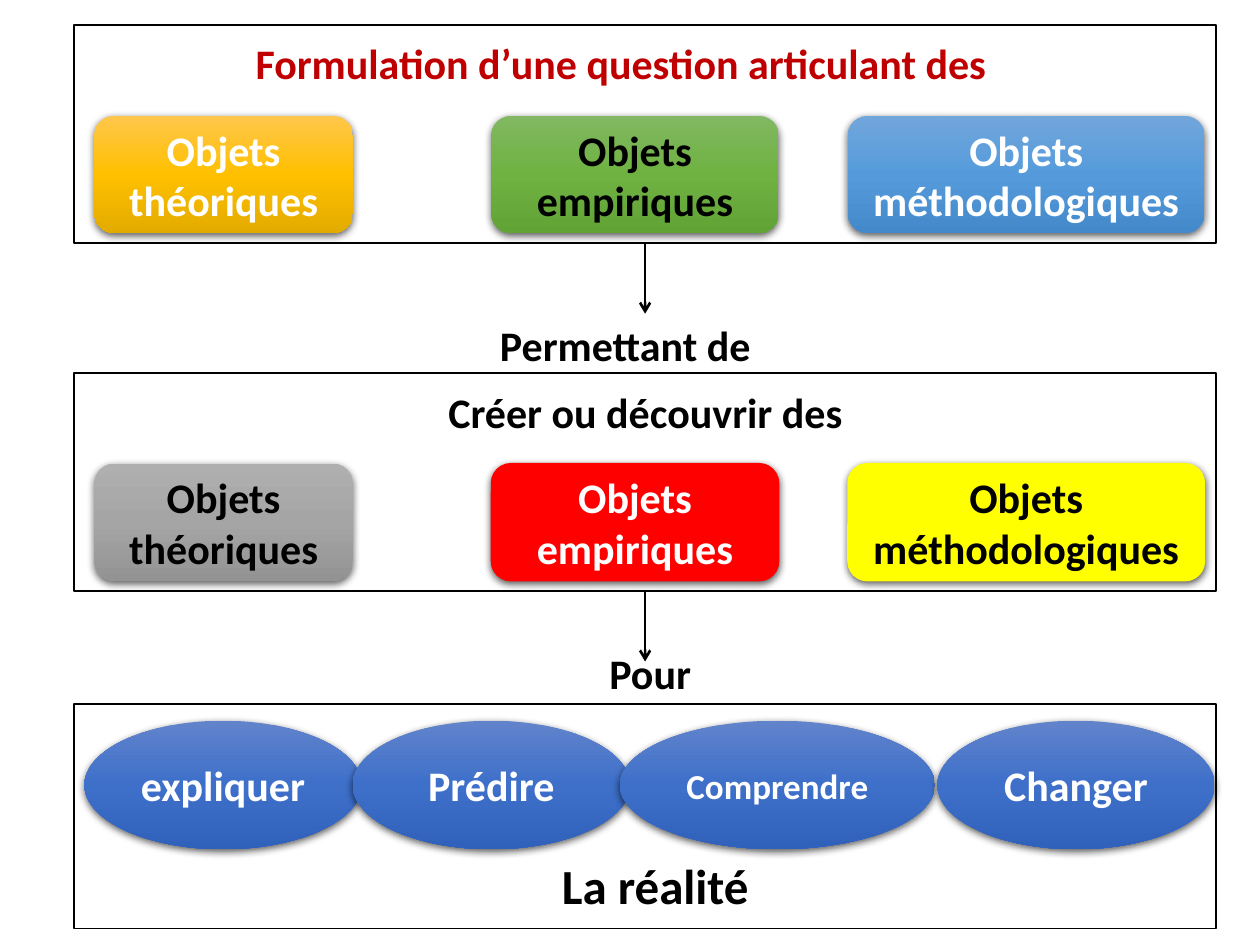
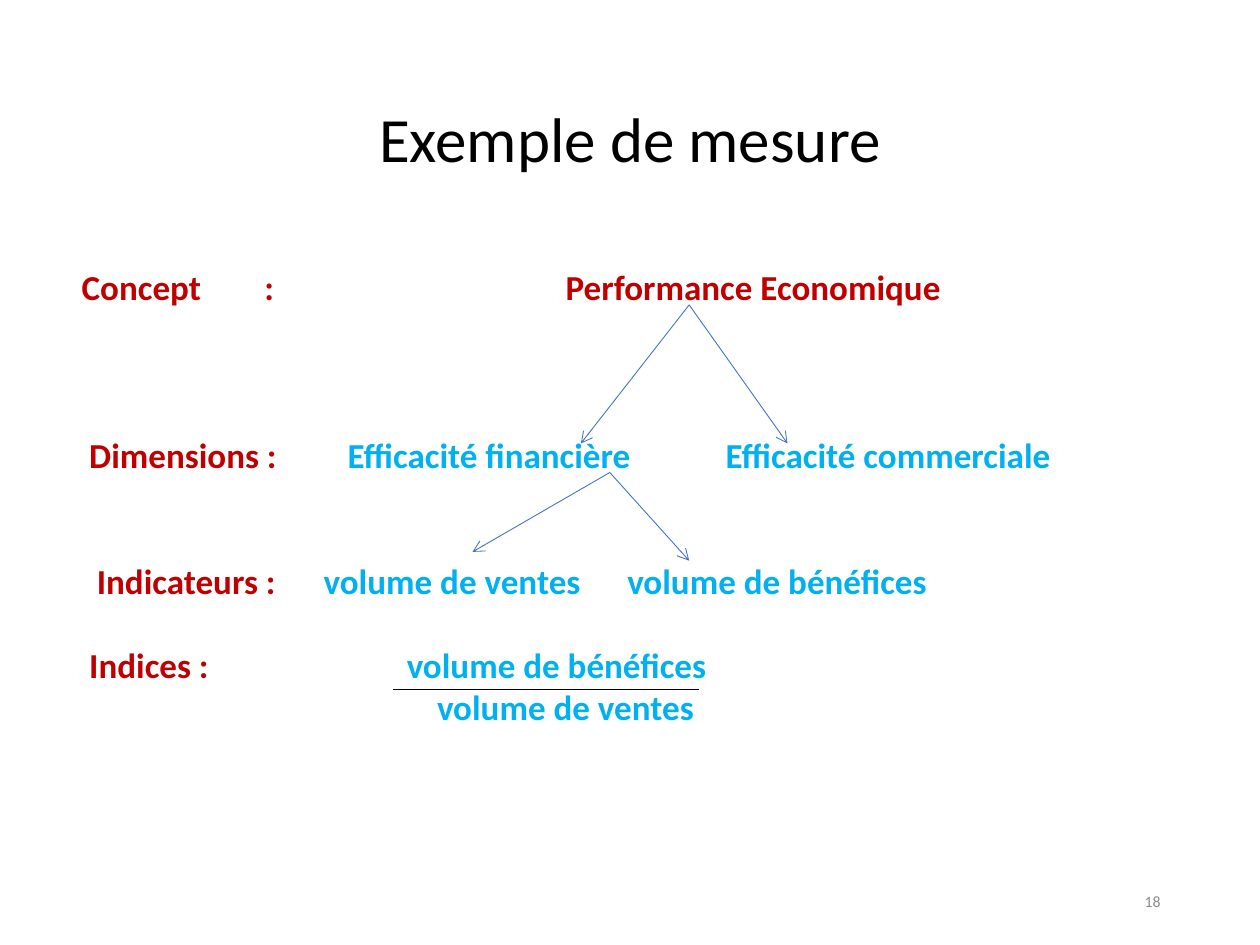
from copy import deepcopy
from dataclasses import dataclass

from lxml.etree import SubElement
from pptx import Presentation
from pptx.dml.color import RGBColor
from pptx.enum.shapes import MSO_CONNECTOR, MSO_SHAPE
from pptx.enum.text import MSO_ANCHOR, PP_ALIGN
from pptx.oxml.ns import qn
from pptx.util import Emu, Pt

RECT, ROUND, OVAL = MSO_SHAPE.RECTANGLE, MSO_SHAPE.ROUNDED_RECTANGLE, MSO_SHAPE.OVAL
STRAIGHT = MSO_CONNECTOR.STRAIGHT
LEFT, MID, RIGHT = PP_ALIGN.LEFT, PP_ALIGN.CENTER, PP_ALIGN.RIGHT
TOP, CENTER = MSO_ANCHOR.TOP, MSO_ANCHOR.MIDDLE
BOTTOM = 2      # connection site
PX = 9144       # EMU in one px, 100 px to the inch


# Theme
@dataclass(frozen=True)
class Theme:
    font: str = "Calibri"
    black: str = "000000"
    white: str = "FFFFFF"
    crimson: str = "C00000"
    cyan: str = "00B0F0"
    blue: str = "4472C4"
    gray: str = "8C8C8C"
    gold: tuple = ("FFC64B", "FFC000", "E3AB00")
    green: tuple = ("81B861", "6FB242", "62A336")
    sky: tuple = ("71A6DB", "559BDB", "448ACA")
    steel: tuple = ("AFAFAF", "A5A5A5", "939393")
    royal: tuple = ("6183CB", "3E70CA", "3062BB")
    red: tuple = ("FF0000",)
    yellow: tuple = ("FFFF00",)
    title: int = 36
    large: int = 28
    head: int = 24
    body: int = 20
    small: int = 9


T = Theme()


@dataclass(frozen=True)
class Box:
    x: int
    y: int
    w: int
    h: int


@dataclass(frozen=True)
class Style:
    size: int = T.head
    color: str = T.black
    bold: bool = True
    align: PP_ALIGN = MID
    anchor: MSO_ANCHOR = TOP


@dataclass(frozen=True)
class Node:
    text: str
    x: int
    w: int
    fill: tuple
    ink: str = T.white
    size: int = T.head


@dataclass(frozen=True)
class Row:
    label: str
    rest: str
    tabs: tuple
    before: int = 0
    color: str = T.cyan


# Drawing tools
def rgb(code: str) -> RGBColor:
    return RGBColor.from_string(code)


def place(box: Box) -> list[Emu]:
    return [Emu(n * PX) for n in (box.x, box.y, box.w, box.h)]


def set_font(para, size: int, bold: bool) -> None:
    para.font.name = T.font
    para.font.size = Pt(size)
    para.font.bold = bold


def write(frame, text: str, style: Style):
    frame.word_wrap = True
    frame.vertical_anchor = style.anchor
    para = frame.paragraphs[0]
    para.text = text
    para.alignment = style.align
    set_font(para, style.size, style.bold)
    para.font.color.rgb = rgb(style.color)
    return para


def add_text(slide, box: Box, text: str, style: Style):
    return write(slide.shapes.add_textbox(*place(box)).text_frame, text, style)


def add_frame(slide, box: Box):
    shape = slide.shapes.add_shape(RECT, *place(box))
    shape.shadow.inherit = False
    shape.fill.solid()
    shape.fill.fore_color.rgb = rgb(T.white)
    shape.line.color.rgb = rgb(T.black)
    shape.line.width = Pt(1)
    return shape


def paint(shape, tones: tuple) -> None:
    fill = shape.fill
    if len(tones) == 1:
        fill.solid()
        fill.fore_color.rgb = rgb(tones[0])
        shape.line.color.rgb = rgb(tones[0])
        shape.line.width = Pt(0.75)
        return
    fill.gradient()
    fill.gradient_angle = 270
    stops = shape._element.spPr.find(".//" + qn("a:gsLst"))
    stops.append(deepcopy(stops[0]))
    for i, (stop, tone) in enumerate(zip(fill.gradient_stops, tones)):
        stop.position = i / 2
        stop.color.rgb = rgb(tone)
    shape.line.fill.background()


def add_shade(shape) -> None:
    shape.shadow.inherit = False
    effect = shape._element.spPr.find(qn("a:effectLst"))
    shade = SubElement(effect, qn("a:outerShdw"), blurRad=str(Pt(4.5)),
                       dist=str(Pt(1.5)), dir="5400000", algn="ctr", rotWithShape="0")
    color = SubElement(shade, qn("a:srgbClr"), val=T.black)
    SubElement(color, qn("a:alpha"), val="63000")


def add_nodes(slide, kind: MSO_SHAPE, y: int, h: int, nodes: tuple) -> None:
    for node in nodes:
        shape = slide.shapes.add_shape(kind, *place(Box(node.x, y, node.w, h)))
        paint(shape, node.fill)
        add_shade(shape)
        write(shape.text_frame, node.text, Style(node.size, node.ink, anchor=CENTER))


def add_line(slide, start: tuple, end: tuple, color: str, width: float, arrow: bool = True):
    line = slide.shapes.add_connector(STRAIGHT, *(Emu(n * PX) for n in start + end))
    line.line.color.rgb = rgb(color)
    line.line.width = Pt(width)
    if arrow:
        SubElement(line.line._get_or_add_ln(), qn("a:tailEnd"), type="arrow")
    SubElement(line._element.spPr, qn("a:effectLst"))
    return line


def add_rows(slide, box: Box, rows: tuple) -> None:
    frame = slide.shapes.add_textbox(*place(box)).text_frame
    frame.word_wrap = True
    for i, row in enumerate(rows):
        para = frame.paragraphs[0] if i == 0 else frame.add_paragraph()
        if row.before:
            para.space_before = Pt(row.before)
        stops = SubElement(para._p.get_or_add_pPr(), qn("a:tabLst"))
        for tab in row.tabs:
            SubElement(stops, qn("a:tab"), pos=str(tab * PX), algn="l")
        set_font(para, T.body, True)
        for text, color in ((row.label, T.crimson), (row.rest, row.color)):
            if text:
                run = para.add_run()
                run.text = text
                run.font.color.rgb = rgb(color)


# Slide 1: from the question to reality
NAMES = ("Objets théoriques", "Objets empiriques", "Objets méthodologiques")
SPANS = ((75, 205), (390, 228), (673, 283))


@dataclass(frozen=True)
class Panel:
    y: int
    text: str
    text_y: int
    style: Style
    fills: tuple
    inks: tuple
    link: str
    link_box: Box


PANELS = (
    Panel(20, "Formulation d’une question articulant des", 25,
          Style(color=T.crimson, align=LEFT),
          (T.gold, T.green, T.sky), (T.white, T.black, T.white),
          "Permettant de ", Box(311, 249, 378, 51)),
    Panel(296, "Créer ou découvrir des ", 302, Style(),
          (T.steel, T.red, T.yellow), (T.black, T.white, T.black),
          "Pour", Box(390, 509, 252, 51)),
)
GOALS = (
    Node("expliquer", 67, 220, T.royal),
    Node("Prédire", 280, 220, T.royal),
    Node("Comprendre", 492, 250, T.royal, size=T.body),
    Node("Changer", 744, 220, T.royal),
)


def draw_model(slide) -> None:
    for panel in PANELS:
        frame = add_frame(slide, Box(59, panel.y, 906, 173))
        nodes = tuple(Node(name, x, w, fill, ink) for name, (x, w), fill, ink
                      in zip(NAMES, SPANS, panel.fills, panel.inks))
        add_nodes(slide, ROUND, panel.y + 72, 93, nodes)
        add_text(slide, Box(193, panel.text_y, 646, 51), panel.text, panel.style)
        foot = panel.y + 173
        arrow = add_line(slide, (512, foot), (512, foot + 56), T.black, 1.5)
        arrow.begin_connect(frame, BOTTOM)
        add_text(slide, panel.link_box, panel.link, Style())
    add_frame(slide, Box(59, 559, 906, 178))
    add_nodes(slide, OVAL, 572, 102, GOALS)
    add_text(slide, Box(327, 674, 386, 57), "La réalité", Style(T.large))


# Slide 2: a worked example
ROWS = (
    Row("Concept", "\t:\tPerformance Economique", (145, 384), color=T.crimson),
    Row("\tDimensions :", "\tEfficacité financière\tEfficacité commerciale",
        (6, 211, 511), 72),
    Row("\tIndicateurs :", "\tvolume de ventes\tvolume de bénéfices",
        (12, 192, 433), 48),
    Row("\tIndices :", "\tvolume de bénéfices", (6, 258), 24),
    Row("", "\tvolume de ventes", (282,)),
)
FORKS = (
    ((547, 242), ((461, 352), (625, 352))),
    ((484, 375), ((547, 445), (375, 438))),
)


def draw_case(slide) -> None:
    title = add_text(slide, Box(69, 40, 862, 145), "Exemple de mesure",
                     Style(T.title, bold=False, anchor=CENTER))
    title.line_spacing = 0.9
    add_text(slide, Box(706, 695, 225, 40), "18",
             Style(T.small, T.gray, False, RIGHT, CENTER))
    add_rows(slide, Box(55, 206, 922, 380), ROWS)
    for start, ends in FORKS:
        for end in ends:
            add_line(slide, start, end, T.blue, 0.5)
    add_line(slide, (312, 547), (555, 547), T.black, 0.5, arrow=False)


def main() -> None:
    deck = Presentation()
    deck.slide_width, deck.slide_height = Emu(1000 * PX), Emu(750 * PX)
    blank = deck.slide_layouts[6]
    for draw in (draw_model, draw_case):
        draw(deck.slides.add_slide(blank))
    deck.save("out.pptx")


if __name__ == "__main__":
    main()
